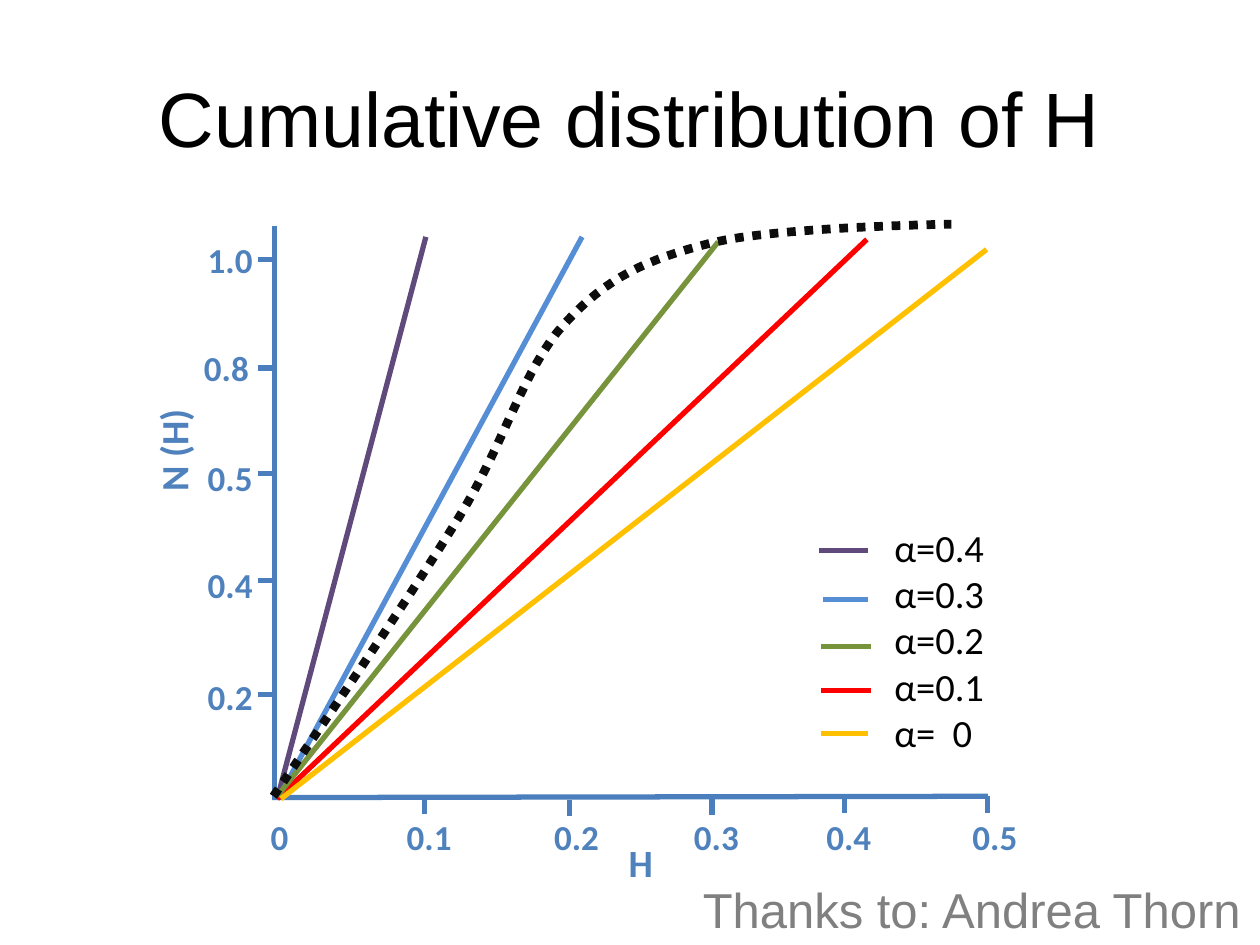
from lxml import etree
from pptx import Presentation
from pptx.dml.color import RGBColor
from pptx.enum import dml, shapes, text
from pptx.oxml import ns
from pptx.util import Inches, Pt

BLACK = RGBColor(0x00, 0x00, 0x00)
NEAR_BLACK = RGBColor(0x0D, 0x0D, 0x0D)
GREY = RGBColor(0x80, 0x80, 0x80)
AXIS_BLUE = RGBColor(0x4B, 0x7E, 0xBC)
LABEL_BLUE = RGBColor(0x4F, 0x81, 0xBD)
PURPLE = RGBColor(0x60, 0x4A, 0x7B)
BLUE = RGBColor(0x55, 0x8E, 0xD5)
GREEN = RGBColor(0x77, 0x93, 0x3C)
RED = RGBColor(0xFF, 0x00, 0x00)
YELLOW = RGBColor(0xFF, 0xC0, 0x00)

TICK = 0.13
AXIS_X = 2.18
Y_TICKS = [  # label, tick height, label left, label top
    ("0.2", 5.51, 1.55, 5.31),
    ("0.4", 4.61, 1.55, 4.42),
    ("0.5", 3.76, 1.55, 3.57),
    ("0.8", 2.92, 1.52, 2.70),
    ("1.0", 2.06, 1.55, 1.84),
]
X_TICKS = [(3.37, 6.33), (4.52, 6.35), (5.65, 6.34), (6.70, 6.32), (7.84, 6.32)]
X_LABELS = ["0", "0.1", "0.2", "0.3", "0.4", "0.5"]
X_LABEL_STOPS = [1.08, 2.25, 3.36, 4.41, 5.57]
SERIES = [  # colour, upper end, lower end, legend key left, right, height
    (PURPLE, (3.38, 1.88), (2.20, 6.34), 6.50, 6.89, 4.37),
    (BLUE, (4.62, 1.88), (2.24, 6.28), 6.53, 6.89, 4.76),
    (RED, (6.88, 1.90), (2.20, 6.34), 6.52, 6.91, 5.48),
    (GREEN, (5.70, 1.92), (2.20, 6.32), 6.52, 6.91, 5.13),
    (YELLOW, (7.83, 1.98), (2.23, 6.34), 6.52, 6.89, 5.82),
]
LEGEND = ["α=0.4", "α=0.3", "α=0.2", "α=0.1", "α=  0"]
CURVE_START = (2.17, 6.32)
CURVE = [  # two control points and the end of each Bézier segment
    ((2.71, 5.53), (3.25, 4.74), (3.64, 4.11)),
    ((4.02, 3.49), (4.15, 2.93), (4.48, 2.57)),
    ((4.82, 2.20), (5.13, 2.06), (5.64, 1.93)),
    ((6.15, 1.80), (7.55, 1.78), (7.55, 1.78)),
]


def add_line(slide, start, end, color):
    line = slide.shapes.add_connector(
        shapes.MSO_CONNECTOR.STRAIGHT, *map(Inches, start + end))
    line.line.color.rgb = color
    line.line.width = Pt(3)
    etree.SubElement(line._element.spPr, ns.qn("a:effectLst"))


def add_label(slide, box, lines, size, color, bold=False, font="Calibri", wrap=True):
    label = slide.shapes.add_textbox(*map(Inches, box))
    frame = label.text_frame
    frame.word_wrap = wrap
    frame.auto_size = text.MSO_AUTO_SIZE.SHAPE_TO_FIT_TEXT
    frame.text = "\n".join(lines)
    for paragraph in frame.paragraphs:
        style(paragraph, size, color, font, bold)
    return label


def style(paragraph, size, color, font, bold=False):
    for run in paragraph.runs:
        run.font.size = Pt(size)
        run.font.color.rgb = color
        run.font.name = font
        run.font.bold = bold


def set_tab_stops(paragraph, stops):
    tabs = etree.SubElement(paragraph._p.get_or_add_pPr(), ns.qn("a:tabLst"))
    for stop in stops:
        etree.SubElement(tabs, ns.qn("a:tab"), pos=str(Inches(stop)), algn="l")


def bezier_points(start, segments, steps=16):
    """Return points along joined cubic segments, including the start."""
    points = [start]
    for c1, c2, end in segments:
        for step in range(1, steps + 1):
            t = step / steps
            s = 1 - t
            points.append(tuple(
                s**3 * a + 3 * s * s * t * b + 3 * s * t * t * c + t**3 * d
                for a, b, c, d in zip(start, c1, c2, end)))
        start = end
    return points


def add_title(slide):
    title = slide.shapes.title
    title.left, title.top, title.width, title.height = map(Inches, (0.5, 0.3, 9, 1.25))
    title.text_frame.text = "Cumulative distribution of H"
    title.text_frame.vertical_anchor = text.MSO_ANCHOR.MIDDLE
    paragraph = title.text_frame.paragraphs[0]
    paragraph.alignment = text.PP_ALIGN.CENTER
    style(paragraph, 44, BLACK, "Arial")


def add_axes(slide):
    add_line(slide, (AXIS_X, 1.79), (AXIS_X, 6.34), AXIS_BLUE)
    add_line(slide, (2.16, 6.33), (7.84, 6.32), AXIS_BLUE)
    for _, y, _, _ in Y_TICKS:
        add_line(slide, (AXIS_X - TICK, y), (AXIS_X, y), AXIS_BLUE)
    for x, y in X_TICKS:
        add_line(slide, (x, y), (x, y + TICK), AXIS_BLUE)
    x_labels = add_label(slide, (2.05, 6.42, 7.24, 0.64), ["\t".join(X_LABELS)],
                         20, LABEL_BLUE, bold=True)
    set_tab_stops(x_labels.text_frame.paragraphs[0], X_LABEL_STOPS)
    for value, _, left, top in Y_TICKS:
        add_label(slide, (left, top, 0.91, 0.44), [value], 20, LABEL_BLUE, bold=True)


def add_series(slide):
    for color, upper, lower, *_ in SERIES:
        add_line(slide, upper, lower, color)
    for color, _, _, left, right, y in SERIES:
        add_line(slide, (right, y), (left, y), color)
    add_label(slide, (7, 4.11, 1.48, 1.95), LEGEND, 22, BLACK)


def add_dotted_curve(slide):
    start, *points = [(Inches(x), Inches(y))
                      for x, y in bezier_points(CURVE_START, CURVE)]
    builder = slide.shapes.build_freeform(*start)
    builder.add_line_segments(points, close=False)
    curve = builder.convert_to_shape()
    curve.shadow.inherit = False
    curve.fill.background()
    curve.line.color.rgb = NEAR_BLACK
    curve.line.width = Pt(5)
    curve.line.dash_style = dml.MSO_LINE.ROUND_DOT


def add_axis_titles(slide):
    y_title = add_label(slide, (1.14, 3.24, 0.57, 0.76), ["N (H)"], 22, LABEL_BLUE,
                        bold=True, wrap=False)
    y_title.text_frame._txBody.bodyPr.set("vert", "vert270")
    add_label(slide, (4.89, 6.61, 0.4, 0.47), ["H"], 22, LABEL_BLUE, bold=True)


def main():
    deck = Presentation()
    deck.slide_width, deck.slide_height = Inches(10), Inches(7.5)
    slide = deck.slides.add_slide(deck.slide_layouts[5])
    add_title(slide)
    add_axes(slide)
    add_series(slide)
    add_dotted_curve(slide)
    add_axis_titles(slide)
    add_label(slide, (5.48, 6.93, 4.52, 0.57), ["Thanks to: Andrea Thorn"], 28, GREY,
              font="Arial", wrap=False)
    deck.save("out.pptx")


if __name__ == "__main__":
    main()
